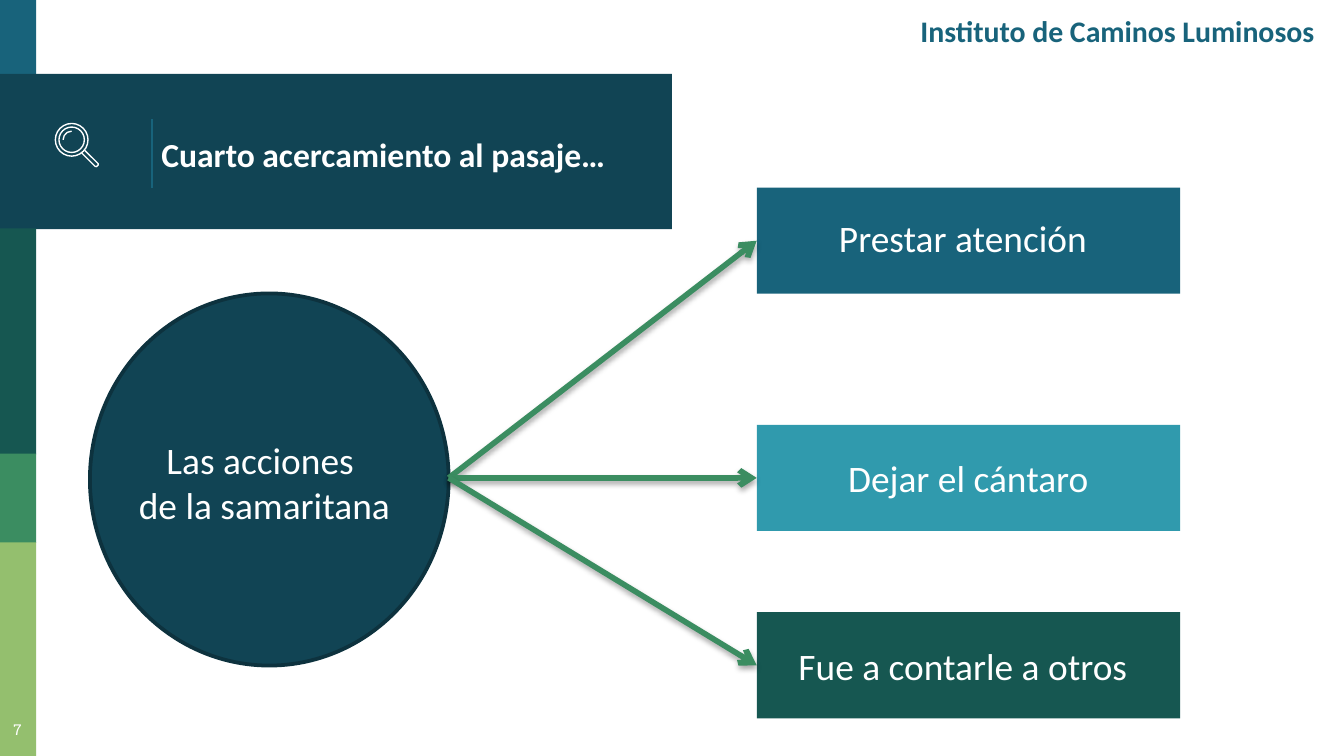
from lxml import etree
from pptx import Presentation
from pptx.dml.color import RGBColor
from pptx.enum.shapes import MSO_CONNECTOR, MSO_SHAPE
from pptx.enum.text import MSO_ANCHOR, PP_ALIGN
from pptx.oxml import parse_xml
from pptx.oxml.ns import nsdecls, qn
from pptx.util import Pt

RECT, OVAL, ARC = MSO_SHAPE.RECTANGLE, MSO_SHAPE.OVAL, MSO_SHAPE.ARC
STRAIGHT = MSO_CONNECTOR.STRAIGHT
TOP, MIDDLE = MSO_ANCHOR.TOP, MSO_ANCHOR.MIDDLE
LEFT, CENTER, RIGHT = PP_ALIGN.LEFT, PP_ALIGN.CENTER, PP_ALIGN.RIGHT

COLORS = {
    "white": "FFFFFF", "blue": "18637B", "navy": "114454", "navy edge": "0D323E",
    "forest": "165751", "green": "3B8D61", "lime": "94BF6E", "teal": "309AAD",
}

TITLE = "Cuarto acercamiento al pasaje…"
INSTITUTE = "Instituto de Caminos Luminosos"
PAGE_NUMBER = "7"
TOPIC = ["Las acciones ", "de la samaritana"]
# text, fill, box top, label left, label top
ACTIONS = [
    ("Prestar atención", "blue", 100.5, 411.1, 111.6),
    ("Dejar el cántaro", "teal", 227.6, 414, 240.5),
    ("Fue a contarle a otros", "forest", 328, 411.1, 341.3),
]
# fill, left, top, width, height
BANDS = [
    ("blue", 0, 0, 19.4, 41.8),
    ("navy", 0, 39.6, 360, 83.2),
    ("forest", 0, 122.4, 19.4, 121),
    ("green", 0, 243, 19.4, 47.9),
    ("lime", 0, 290.6, 19.4, 114.4),
]
CIRCLE = (48.2, 157.2, 192.2, 199.4)
BOX_LEFT, BOX_WIDTH, BOX_HEIGHT = 405.4, 226.8, 56.9
LABEL_WIDTH, LABEL_HEIGHT = 209.5, 31.7
LENS_CENTER = (38.4, 74.9)
LENS_RADII = [(OVAL, 8.75), (OVAL, 6.8), (ARC, 4.6)]
# Arc angles in units of 1/60000 degree, scaled by python-pptx's 100000
ARC_UNIT = 60000 / 100000
HANDLE = [(43.8, 82), (51, 89.2), (51.7, 89.3), (52.7, 88.4), (52.6, 87.7), (45.4, 80.5)]


def rgb(name):
    return RGBColor.from_string(COLORS[name])


def style(shape, fill=None, line=None, weight=0.75):
    shape.shadow.inherit = False
    if fill:
        shape.fill.solid()
        shape.fill.fore_color.rgb = rgb(fill)
    else:
        shape.fill.background()
    if line:
        shape.line.color.rgb = rgb(line)
        shape.line.width = Pt(weight)
    else:
        shape.line.fill.background()


def add_shape(shapes, kind, bounds, fill=None, line=None, weight=0.75):
    shape = shapes.add_shape(kind, *map(Pt, bounds))
    style(shape, fill, line, weight)
    return shape


def write(holder, lines, size, color="white", align=CENTER, bold=False,
          font="Calibri", anchor=TOP, insets=(7.2, 3.6, 7.2, 3.6)):
    """Fill a text holder; insets are left, top, right, bottom."""
    frame = holder.text_frame
    frame.word_wrap = True
    frame.vertical_anchor = anchor
    (frame.margin_left, frame.margin_top,
     frame.margin_right, frame.margin_bottom) = map(Pt, insets)
    for index, text in enumerate(lines):
        paragraph = frame.add_paragraph() if index else frame.paragraphs[0]
        paragraph.alignment = align
        run = paragraph.add_run()
        run.text = text
        run.font.name, run.font.size, run.font.bold = font, Pt(size), bold
        run.font.color.rgb = rgb(color)


def add_text(shapes, bounds, lines, size, **options):
    write(shapes.add_textbox(*map(Pt, bounds)), lines, size, **options)


def add_line(shapes, start, end, color, weight):
    line = shapes.add_connector(STRAIGHT, *map(Pt, start + end))
    line.line.color.rgb = rgb(color)
    line.line.width = Pt(weight)
    effects = parse_xml(f"<a:effectLst {nsdecls('a')}/>")
    line.element.spPr.append(effects)
    return line, effects


def add_arrow(shapes, start, end):
    """Draw a green arrow with a soft shadow straight below it."""
    arrow, effects = add_line(shapes, start, end, "green", 3)
    outline = arrow.element.spPr.find(qn("a:ln"))
    etree.SubElement(outline, qn("a:tailEnd"), type="arrow")
    effects.append(parse_xml(
        f'<a:outerShdw {nsdecls("a")} blurRad="{Pt(3.1)}" dist="{Pt(1.8)}" '
        'dir="5400000" rotWithShape="0"><a:srgbClr val="000000">'
        '<a:alpha val="35000"/></a:srgbClr></a:outerShdw>'))


def add_magnifier(shapes):
    icon = shapes.add_group_shape().shapes
    x, y = LENS_CENTER
    for kind, radius in LENS_RADII:
        part = add_shape(icon, kind, (x - radius, y - radius, 2 * radius, 2 * radius),
                         line="white")
        if kind == ARC:
            part.adjustments[0] = 180 * ARC_UNIT
            part.adjustments[1] = 270 * ARC_UNIT
    outline = icon.build_freeform(*map(Pt, HANDLE[0]))
    outline.add_line_segments([(Pt(px), Pt(py)) for px, py in HANDLE[1:]], close=False)
    style(outline.convert_to_shape(), line="white")


def main():
    deck = Presentation()
    deck.slide_width, deck.slide_height = Pt(720), Pt(405)
    slide = deck.slides.add_slide(deck.slide_layouts[5])
    shapes = slide.shapes

    for fill, *bounds in BANDS:
        add_shape(shapes, RECT, bounds, fill)
    add_line(shapes, (81.5, 64), (81.5, 100.8), "blue", 0.75)
    add_shape(shapes, OVAL, CIRCLE, "navy", "navy edge", 2)

    title = shapes.title
    title.left, title.top, title.width, title.height = map(Pt, (79.2, 42.2, 303.8, 80.6))
    write(title, [TITLE], 18, align=LEFT, bold=True, anchor=MIDDLE, insets=[7.2] * 4)
    title.element.getparent().append(title.element)  # in front of the banner

    add_text(shapes, (-4.3, 381, 27.4, 24), [PAGE_NUMBER], 8,
             font="Roboto Slab", insets=[7.2] * 4)
    add_text(shapes, (445, 3.2, 266.4, 43.9), [INSTITUTE], 16,
             color="blue", align=RIGHT, bold=True)
    add_magnifier(shapes)

    hub = (CIRCLE[0] + CIRCLE[2], ACTIONS[1][2] + BOX_HEIGHT / 2)
    for _, fill, box_top, _, _ in ACTIONS:
        add_shape(shapes, RECT, (BOX_LEFT, box_top, BOX_WIDTH, BOX_HEIGHT), fill)
    for _, _, box_top, _, _ in ACTIONS:
        add_arrow(shapes, hub, (BOX_LEFT, box_top + BOX_HEIGHT / 2))
    for text, _, _, label_left, label_top in ACTIONS:
        add_text(shapes, (label_left, label_top, LABEL_WIDTH, LABEL_HEIGHT), [text], 20)
    add_text(shapes, (36.9, 230.8, LABEL_WIDTH, 55.4), TOPIC, 20)

    deck.save("out.pptx")


if __name__ == "__main__":
    main()
